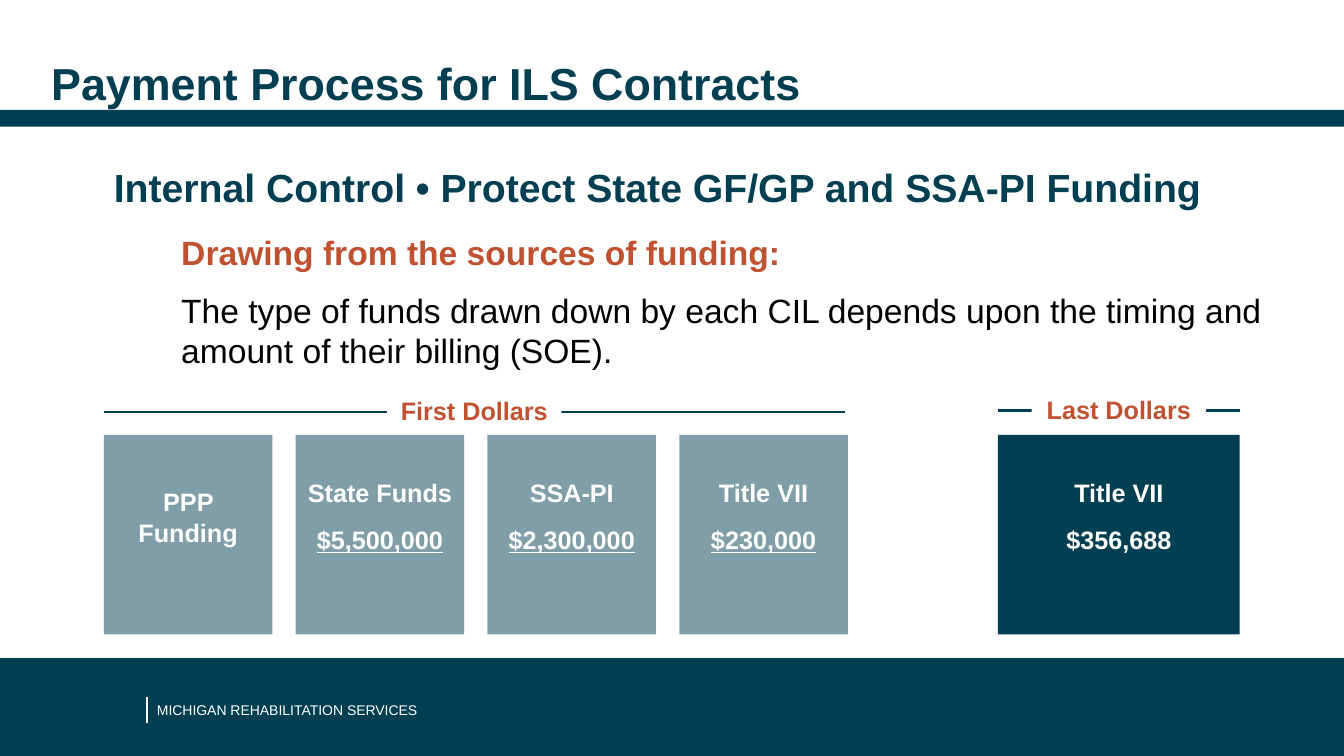
from lxml import etree
from pptx import Presentation
from pptx.dml.color import RGBColor
from pptx.enum.shapes import MSO_CONNECTOR as LINE, MSO_SHAPE as SHAPE
from pptx.enum.text import MSO_ANCHOR as ANCHOR, PP_ALIGN as ALIGN
from pptx.oxml.ns import qn
from pptx.util import Pt

COLORS = {"teal": "003E51", "rust": "C05131", "white": "FFFFFF", "black": "000000"}
FONT = "Arial"
SLIDE_W, SLIDE_H = 960, 540

BANDS = [(78.5, 12), (470, 70)]

TEXTS = [
    (29.5, 36, 844.5, 43, [("Payment Process for ILS Contracts", 32, "teal", True)]),
    (74.2, 113.2, 885.8, 40, [
        ("Internal Control • Protect State GF/GP and SSA-PI Funding", 28, "teal", True)]),
    (122.4, 161.8, 817, 104, [
        ("Drawing from the sources of funding:", 24, "rust", True),
        ("The type of funds drawn down by each CIL depends upon the timing and "
         "amount of their billing (SOE).", 24, "black", False)]),
    (105, 497.5, 209, 19.5, [("MICHIGAN REHABILITATION SERVICES", 10, "white", False)]),
]
FOOTER_RULE = (105, 498, 516.5)

FIRST_FUNDS = [
    (["PPP Funding"], 37),
    (["State Funds", "$5,500,000"], 30.5),
    (["SSA-PI", "$2,300,000"], 30.5),
    (["Title VII", "$230,000"], 30.5),
]
LAST_FUND = (["Title VII", "$356,688"], 30.5)

BOX_TOP, BOX_W, BOX_H, BOX_PITCH = 310.6, 120.4, 142.6, 137
FIRST_LEFT, LAST_LEFT, LAST_W = 74.2, 712.8, 172.8
LABEL_W, LABEL_H = 124.6, 28.8
HEADERS = [
    ("First Dollars", FIRST_LEFT, 529.2, 294.5),
    ("Last Dollars", LAST_LEFT, LAST_W, 293.2),
]


def rgb(name):
    return RGBColor.from_string(COLORS[name])


def style(p, size, color, bold, underline=False):
    for r in p.runs:
        font = r.font
        font.name, font.size, font.bold = FONT, Pt(size), bold
        font.color.rgb = rgb(color)
        if underline:
            font.underline = True


def add_rect(x, y, w, h, color, alpha=None):
    s = slide.shapes.add_shape(SHAPE.RECTANGLE, Pt(x), Pt(y), Pt(w), Pt(h))
    s.shadow.inherit = False
    s.fill.solid()
    s.fill.fore_color.rgb = rgb(color)
    s.line.fill.background()
    if alpha:
        clr = s.fill._xPr.find(qn("a:solidFill"))[0]
        etree.SubElement(clr, qn("a:alpha")).set("val", str(alpha * 1000))
    return s


def add_line(x1, y1, x2, y2, color, width):
    s = slide.shapes.add_connector(LINE.STRAIGHT, Pt(x1), Pt(y1), Pt(x2), Pt(y2))
    s.line.color.rgb = rgb(color)
    s.line.width = Pt(width)
    etree.SubElement(s._element.spPr, qn("a:effectLst"))


def add_text(x, y, w, h, paragraphs):
    tf = slide.shapes.add_textbox(Pt(x), Pt(y), Pt(w), Pt(h)).text_frame
    tf.word_wrap = True
    tf.text = "\n".join(text for text, *_ in paragraphs)
    for i, (p, (_, size, color, bold)) in enumerate(zip(tf.paragraphs, paragraphs)):
        p.space_before = Pt(13 if i else 0)
        style(p, size, color, bold)


def add_fund(x, w, fund, alpha=None, underline=False):
    lines, inset = fund
    tf = add_rect(x, BOX_TOP, w, BOX_H, "teal", alpha).text_frame
    tf.word_wrap = True
    tf.vertical_anchor = ANCHOR.TOP
    tf.margin_top = Pt(inset)
    tf.text = "\n".join(lines)
    for i, p in enumerate(tf.paragraphs):
        p.alignment = ALIGN.CENTER
        p.space_before = Pt(12 if i else 0)
        style(p, 18, "white", True, underline and i > 0)


def add_header(text, x, w, y):
    add_line(x, y, x + w, y, "teal", 1.5)
    s = add_rect(x + (w - LABEL_W) / 2, y - LABEL_H / 2 - 1, LABEL_W, LABEL_H, "white")
    tf = s.text_frame
    tf.text = text
    tf.vertical_anchor = ANCHOR.MIDDLE
    tf.paragraphs[0].alignment = ALIGN.CENTER
    style(tf.paragraphs[0], 18, "rust", True)


prs = Presentation()
prs.slide_width, prs.slide_height = Pt(SLIDE_W), Pt(SLIDE_H)
slide = prs.slides.add_slide(prs.slide_layouts[6])

for top, height in BANDS:
    add_rect(0, top, SLIDE_W, height, "teal")
for box in TEXTS:
    add_text(*box)
rule_x, rule_top, rule_bottom = FOOTER_RULE
add_line(rule_x, rule_top, rule_x, rule_bottom, "white", 0.75)
for header in HEADERS:
    add_header(*header)
for i, fund in enumerate(FIRST_FUNDS):
    add_fund(FIRST_LEFT + i * BOX_PITCH, BOX_W, fund, alpha=50, underline=True)
add_fund(LAST_LEFT, LAST_W, LAST_FUND)

prs.save("out.pptx")
